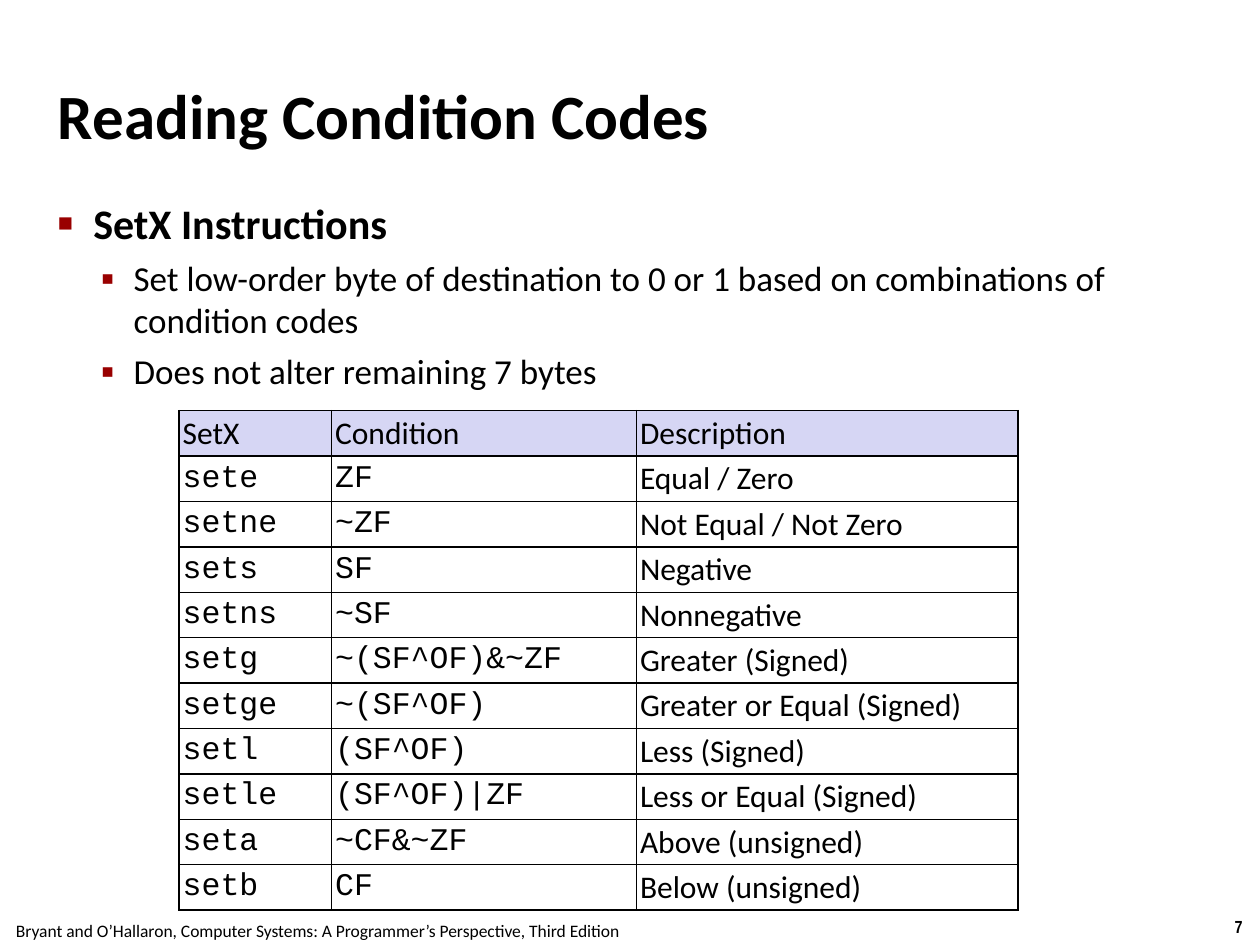
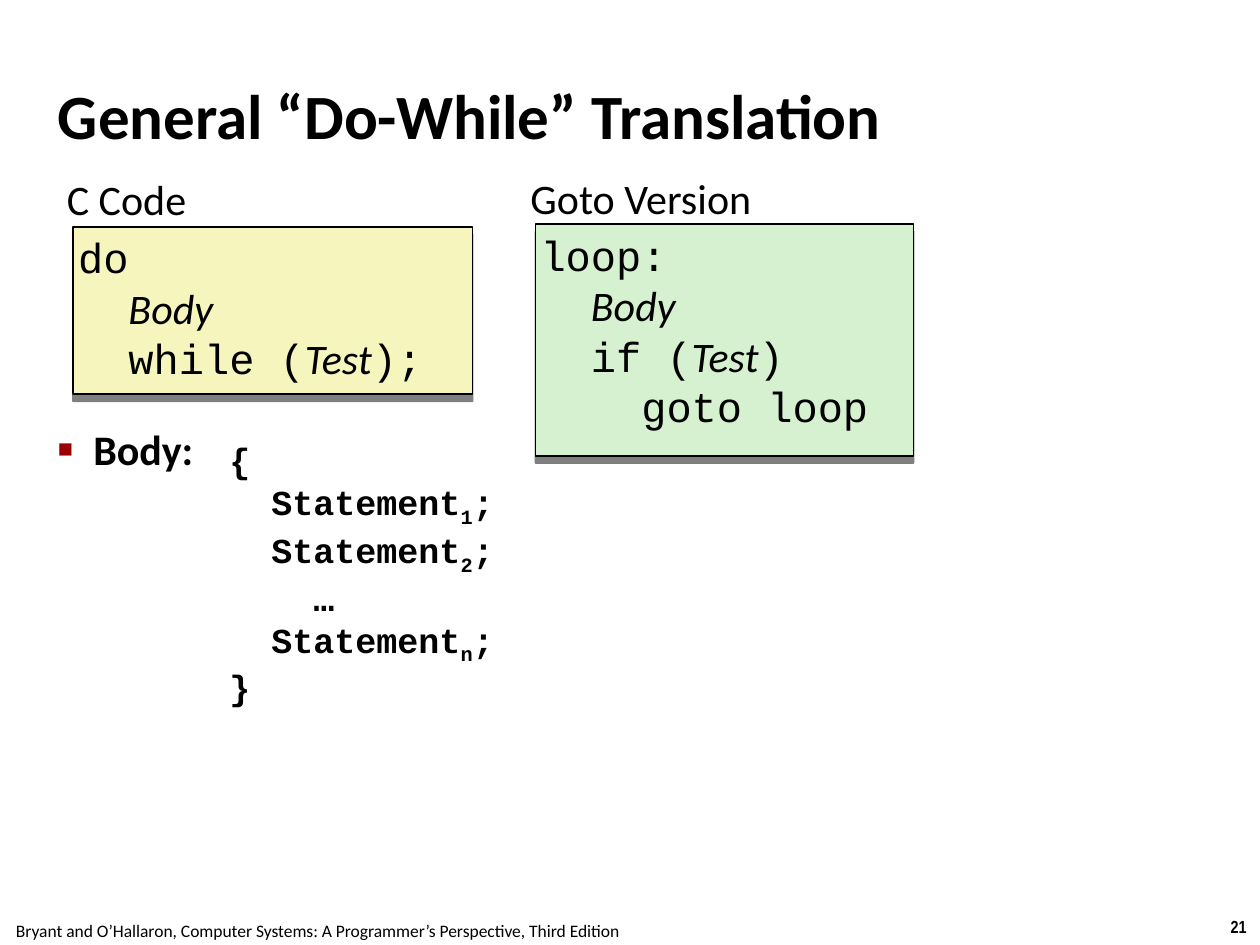
from lxml import etree
from pptx import Presentation
from pptx.dml.color import RGBColor
from pptx.enum.shapes import MSO_SHAPE
from pptx.enum.text import MSO_ANCHOR, MSO_AUTO_SIZE, PP_ALIGN
from pptx.oxml.ns import qn
from pptx.util import Inches, Pt

RECT = MSO_SHAPE.RECTANGLE
TOP, MIDDLE = MSO_ANCHOR.TOP, MSO_ANCHOR.MIDDLE
FIXED = MSO_AUTO_SIZE.NONE
LEFT, CENTER = PP_ALIGN.LEFT, PP_ALIGN.CENTER

BLACK = RGBColor(0x00, 0x00, 0x00)
RED = RGBColor(0x99, 0x00, 0x00)
LILAC = RGBColor(0xD6, 0xD6, 0xF4)
YELLOW = RGBColor(0xF6, 0xF5, 0xBD)
GREEN = RGBColor(0xD5, 0xF1, 0xCF)

SANS, MONO, NARROW = "Calibri", "Courier New", "Arial Narrow"
SOURCE = "Bryant and O’Hallaron, Computer Systems: A Programmer’s Perspective, Third Edition"
PLAIN, SLANT, SUB = "plain", "slant", "sub"
LEVELS = [
    dict(char="■", scale=60, size=24, bold=True, left=0.28, hang=0.28, before=6),
    dict(char="▪", scale=110, size=20, bold=False, left=0.6, hang=0.26, before=5),
]

CODES = [
    ("SetX", "Condition", "Description"),
    ("sete", "ZF", "Equal / Zero"),
    ("setne", "~ZF", "Not Equal / Not Zero"),
    ("sets", "SF", "Negative"),
    ("setns", "~SF", "Nonnegative"),
    ("setg", "~(SF^OF)&~ZF", "Greater (Signed)"),
    ("setge", "~(SF^OF)", "Greater or Equal (Signed)"),
    ("setl", "(SF^OF)", "Less (Signed)"),
    ("setle", "(SF^OF)|ZF", "Less or Equal (Signed)"),
    ("seta", "~CF&~ZF", "Above (unsigned)"),
    ("setb", "CF", "Below (unsigned)"),
]


def node(parent, tag, **attrs):
    return etree.SubElement(parent, qn(tag), {k: str(v) for k, v in attrs.items()})


def place(left, top, width, height):
    return [Inches(n) for n in (left, top, width, height)]


class Deck:
    def __init__(self):
        self.prs = Presentation()
        self.prs.slide_width = Inches(10)
        self.prs.slide_height = Inches(7.5)
        self.slide = None

    def page(self, title, number):
        self.slide = self.prs.slides.add_slide(self.prs.slide_layouts[1])
        self.footer(str(number), 9.66, 7.22, 0.34, NARROW, True)
        self.footer(SOURCE, -0.02, 7.25, 5.08, SANS, False)
        head = self.slide.shapes.title
        self.move(head, (0.42, 0.28, 9.17, 1.25))
        frame = self.frame(head, MIDDLE)
        frame.text = title
        para = frame.paragraphs[0]
        para.alignment = LEFT
        self.font(para, 36, SANS, True)

    def font(self, item, size, name, bold=False):
        font = item.font
        font.size, font.name, font.bold = Pt(size), name, bold
        font.color.rgb = BLACK

    def move(self, shape, box):
        shape.left, shape.top, shape.width, shape.height = place(*box)

    def frame(self, shape, anchor=TOP, inset=0.04):
        frame = shape.text_frame
        frame.word_wrap = True
        frame.auto_size = FIXED
        frame.vertical_anchor = anchor
        self.pad(frame, inset)
        return frame

    def pad(self, item, inset):
        item.margin_left = item.margin_right = Inches(inset)
        item.margin_top = item.margin_bottom = Inches(inset)

    def lines(self, frame, items):
        for i, item in enumerate(items):
            yield (frame.add_paragraph() if i else frame.paragraphs[0]), item

    def footer(self, text, left, top, width, name, bold):
        box = self.slide.shapes.add_textbox(*place(left, top, width, 0.27))
        frame = box.text_frame
        frame.word_wrap = False
        frame.text = text
        para = frame.paragraphs[0]
        para.alignment = CENTER
        self.font(para, 10, name, bold)

    def bullets(self, top, height, items):
        body = self.slide.placeholders[1]
        self.move(body, (0.42, top, 9.17, height))
        for para, (level, text) in self.lines(self.frame(body), items):
            style = LEVELS[level]
            para.text = text
            para.level = level
            para.space_before = Pt(style["before"])
            props = para._p.get_or_add_pPr()
            props.set("marL", str(Inches(style["left"])))
            props.set("indent", str(-Inches(style["hang"])))
            node(node(props, "a:buClr"), "a:srgbClr", val=RED)
            node(props, "a:buSzPct", val=style["scale"] * 1000)
            node(props, "a:buChar", char=style["char"])
            self.font(para, style["size"], SANS, style["bold"])

    def label(self, text, left, top, width):
        box = self.slide.shapes.add_textbox(*place(left, top, width, 0.49))
        frame = self.frame(box)
        frame.text = text
        para = frame.paragraphs[0]
        para.space_before = Pt(8.6)
        self.font(para, 24, SANS)

    def code(self, shape, rows, size, bold=False):
        for para, (depth, *parts) in self.lines(self.frame(shape), rows):
            para.alignment = LEFT
            para._p.get_or_add_pPr().set("marL", str(Pt(1.2 * size * depth)))
            self.font(para, size, MONO, bold)
            for text, kind in parts:
                run = para.add_run()
                run.text = text
                if kind == SLANT:
                    run.font.name, run.font.italic = SANS, True
                elif kind == SUB:
                    run._r.get_or_add_rPr().set("baseline", "-25000")

    def panel(self, box, color, rows):
        shape = self.slide.shapes.add_shape(RECT, *place(*box))
        shape.fill.solid()
        shape.fill.fore_color.rgb = color
        shape.line.color.rgb = BLACK
        shape.line.width = Pt(1)
        shape.shadow.inherit = False
        effects = shape._element.spPr.find(qn("a:effectLst"))
        shade = node(effects, "a:outerShdw", blurRad=0, dist=Pt(4), dir=5400000,
                     algn="ctr", rotWithShape=0)
        node(node(shade, "a:srgbClr", val=BLACK), "a:alpha", val=50000)
        self.code(shape, rows, 24)

    def listing(self, box, rows):
        self.code(self.slide.shapes.add_textbox(*place(*box)), rows, 20, True)

    def border(self, cell):
        props = cell._tc.get_or_add_tcPr()
        for i, side in enumerate(("L", "R", "T", "B")):
            line = node(props, "a:ln" + side, w=Pt(1))
            node(node(line, "a:solidFill"), "a:srgbClr", val=BLACK)
            props.insert(i, line)

    def table(self, left, top, widths, height, rows):
        box = place(left, top, sum(widths), height * len(rows))
        grid = self.slide.shapes.add_table(len(rows), len(widths), *box).table
        grid.first_row = grid.horz_banding = False
        for col, width in zip(grid.columns, widths):
            col.width = Inches(width)
        for r, row in enumerate(rows):
            grid.rows[r].height = Inches(height)
            for c, text in enumerate(row):
                cell = grid.cell(r, c)
                cell.text = text
                cell.vertical_anchor = MIDDLE
                self.pad(cell, 0.03)
                if r == 0:
                    cell.fill.solid()
                    cell.fill.fore_color.rgb = LILAC
                else:
                    cell.fill.background()
                self.border(cell)
                name = MONO if r and c < 2 else SANS
                self.font(cell.text_frame.paragraphs[0], 18, name)


def reading(deck):
    deck.page("Reading Condition Codes", 7)
    deck.bullets(1.53, 5.94, [
        (0, "SetX Instructions"),
        (1, "Set low-order byte of destination to 0 or 1 based on combinations of condition codes"),
        (1, "Does not alter remaining 7 bytes"),
    ])
    deck.table(1.42, 3.26, (1.21, 2.42, 3.03), 0.34, CODES)


def loops(deck):
    body = (1, ("Body", SLANT))
    test = ("Test", SLANT)
    deck.page("General “Do-While” Translation", 21)
    deck.label("C Code", 0.49, 1.34, 2.86)
    deck.panel((0.58, 1.8, 3.17, 1.33), YELLOW, [
        (0, ("do", PLAIN)),
        body,
        (1, ("while (", PLAIN), test, (");", PLAIN)),
    ])
    deck.label("Goto Version", 4.17, 1.33, 2.53)
    deck.panel((4.25, 1.78, 3, 1.84), GREEN, [
        (0, ("loop:", PLAIN)),
        body,
        (1, ("if (", PLAIN), test, (")", PLAIN)),
        (2, ("goto loop", PLAIN)),
    ])
    deck.bullets(3.32, 4.15, [(0, "Body:")])
    first, second, last = [
        (1, ("Statement", PLAIN), (mark, SUB), (";", PLAIN)) for mark in "12n"
    ]
    deck.listing((1.78, 3.44, 2.43, 2.47), [
        (0, ("{", PLAIN)), first, second, (2, ("…", PLAIN)), last, (0, ("}", PLAIN)),
    ])


def main():
    deck = Deck()
    reading(deck)
    loops(deck)
    deck.prs.save("out.pptx")


if __name__ == "__main__":
    main()
